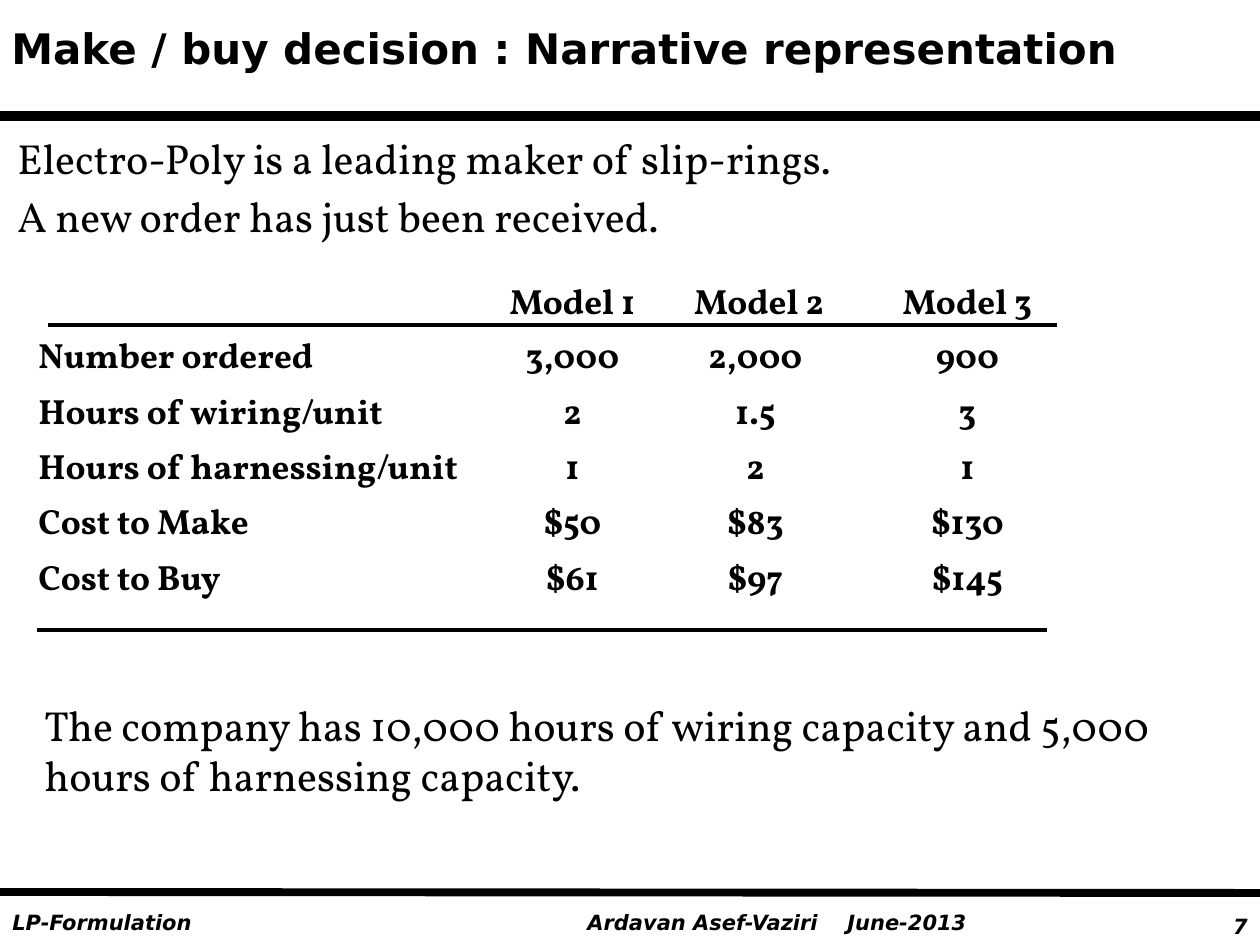
from dataclasses import dataclass, field

from lxml import etree
from pptx import Presentation
from pptx.dml.color import RGBColor
from pptx.enum import shapes, text
from pptx.oxml import ns
from pptx.util import Pt

EMU_PER_PX = 914400 / 126
BLACK = "000000"
SANS, SERIF = "DejaVu Sans", "Vollkorn"


@dataclass
class TextBox:
    box: tuple[int, int, int, int]
    lines: list[str]
    font: dict
    gap: float = 0
    spacing: float = 1.0
    tabs: list[tuple[int, str]] = field(default_factory=list)
    align: str = "LEFT"
    grow: bool = True


@dataclass
class Rule:
    start: tuple[int, int]
    end: tuple[int, int]
    width: float


def px(n: int) -> int:
    return round(n * EMU_PER_PX)


def color(value: str) -> RGBColor:
    return RGBColor.from_string(value)


def add_tabs(p, tabs: list[tuple[int, str]]) -> None:
    tab_list = etree.SubElement(p._p.get_or_add_pPr(), ns.qn("a:tabLst"))
    for pos, align in tabs:
        etree.SubElement(tab_list, ns.qn("a:tab"), pos=str(px(pos)), algn=align)


def draw_text(slide, item: TextBox) -> None:
    sp = slide.shapes.add_textbox(*map(px, item.box))
    tf = sp.text_frame
    tf.word_wrap = True
    if item.grow:
        tf.auto_size = text.MSO_AUTO_SIZE.SHAPE_TO_FIT_TEXT
    for i, line in enumerate(item.lines):
        p = tf.add_paragraph() if i else tf.paragraphs[0]
        if item.tabs:
            add_tabs(p, item.tabs)
        p.alignment = text.PP_ALIGN[item.align]
        if i:
            p.space_before = Pt(item.gap)
            p.line_spacing = item.spacing
        r = p.add_run()
        r.text = line
        for name, value in item.font.items():
            setattr(r.font, name, value)
        r.font.color.rgb = color(BLACK)


def draw_rule(slide, rule: Rule) -> None:
    sp = slide.shapes.add_connector(
        shapes.MSO_CONNECTOR.STRAIGHT, *map(px, rule.start + rule.end))
    sp.line.color.rgb = color(BLACK)
    sp.line.width = Pt(rule.width)
    etree.SubElement(sp._element.spPr, ns.qn("a:effectLst"))


TITLE = dict(name=SANS, size=Pt(24), bold=True)
FOOTER = dict(name=SANS, size=Pt(12), bold=True, italic=True)
BODY = dict(name=SERIF, size=Pt(24))
DATA = dict(name=SERIF, size=Pt(20), bold=True)

ROWS = [
    ("", "Model 1", " Model 2", "Model 3"),
    ("Number ordered", "3,000", "2,000", "900"),
    ("Hours of wiring/unit", "2", "1.5", "3"),
    ("Hours of harnessing/unit", "1", "2", "1"),
    ("Cost to Make", "$50", "$83", "$130"),
    ("Cost to Buy", "$61", "$97", "$145"),
]

TEXTS = [
    # Footer
    TextBox((1166, 907, 94, 38), ["7"], FOOTER, align="RIGHT"),
    TextBox((575, 903, 422, 38), ["Ardavan Asef-Vaziri\tJune-2013"], FOOTER,
            tabs=[(260, "l")]),
    TextBox((0, 903, 588, 38), ["LP-Formulation"], FOOTER),
    # Introduction
    TextBox((5, 126, 1234, 137),
            ["Electro-Poly is a leading maker of slip-rings.",
             "A new order has just been received."],
            BODY, gap=4.8, grow=False),
    # Order data, centred on tab stops
    TextBox((26, 273, 1139, 425), ["\t".join(row) for row in ROWS], DATA,
            gap=10, spacing=0.9,
            tabs=[(534, "ctr"), (717, "ctr"), (929, "ctr")]),
    # Capacity
    TextBox((32, 693, 1187, 189),
            ["The company has 10,000 hours of wiring capacity and 5,000 "
             "hours of harnessing capacity."], BODY, grow=False),
    # Title
    TextBox((-1, 16, 1261, 63),
            ["Make / buy decision : Narrative representation"], TITLE),
]

RULES = [
    # Header and footer bars
    Rule((0, 116), (1260, 116), 6),
    Rule((0, 892), (1260, 893), 4.5),
    # Data rules
    Rule((48, 325), (1057, 325), 2),
    Rule((37, 630), (1047, 630), 2),
]


def main() -> None:
    prs = Presentation()
    prs.slide_width, prs.slide_height = px(1260), px(945)
    s = prs.slides.add_slide(prs.slide_layouts[6])
    for rule in RULES:
        draw_rule(s, rule)
    for item in TEXTS:
        draw_text(s, item)
    prs.save("out.pptx")


if __name__ == "__main__":
    main()
